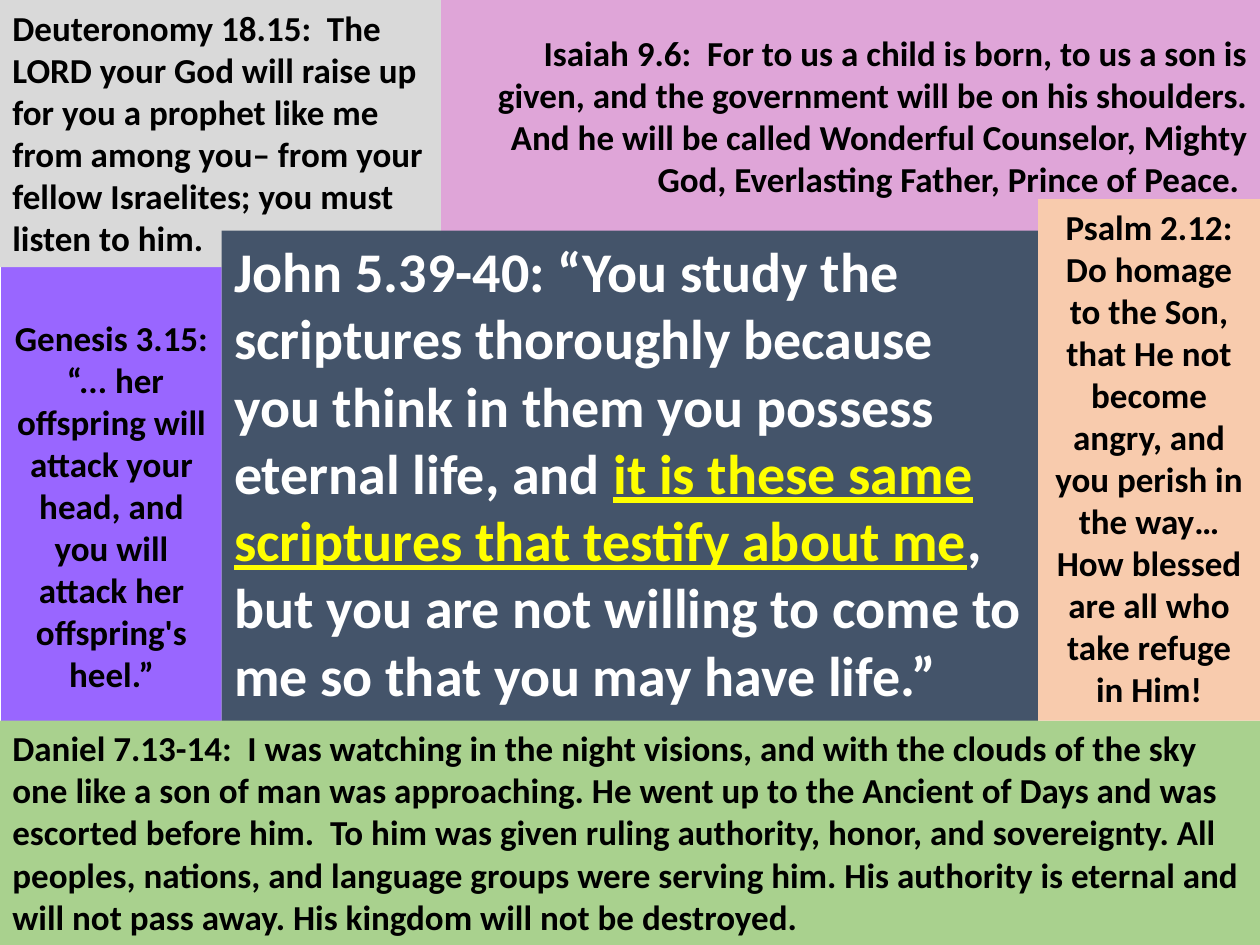
from pptx import Presentation
from pptx.dml.color import RGBColor
from pptx.enum.text import MSO_ANCHOR, MSO_AUTO_SIZE, PP_ALIGN
from pptx.util import Pt

LEFT, CENTER, RIGHT = PP_ALIGN.LEFT, PP_ALIGN.CENTER, PP_ALIGN.RIGHT
TOP = MSO_ANCHOR.TOP
NO_AUTOFIT = MSO_AUTO_SIZE.NONE

FONT = "Calibri"
BLANK_LAYOUT = 6
SLIDE_W, SLIDE_H = 720, 540
VERSE_SIZE, CENTRAL_SIZE = 20, 32
INSET_TOP = 3.6

COLORS = {
    "isaiah": "DFA5D8",
    "genesis": "9966FF",
    "deuteronomy": "D9D9D9",
    "john": "44546A",
    "daniel": "A9D18E",
    "psalm": "F8CBAD",
    "dark": "000000",
    "light": "FFFFFF",
    "highlight": "FFFF00",
}

# Panel edges shared by neighbouring verses
LEFT_COLUMN = 126.72
RIGHT_COLUMN = 593.28
DEUTERONOMY_W, DEUTERONOMY_H = 252, 152.64
PSALM_TOP = 113.76
JOHN_TOP, JOHN_H = 131.76, 317.52
DANIEL_TOP = 411.84

ISAIAH = (
    "Isaiah 9.6:  For to us a child is born, to us a son is given, and the "
    "government will be on his shoulders. And he will be called Wonderful "
    "Counselor, Mighty God, Everlasting Father, Prince of Peace. "
)
GENESIS = (
    "Genesis 3.15:  “... her offspring will attack your head, and you will "
    "attack her offspring's heel.”"
)
DEUTERONOMY = (
    "Deuteronomy 18.15:  The LORD your God will raise up for you a prophet "
    "like me from among you– from your fellow Israelites; you must listen "
    "to him."
)
JOHN_OPENING = (
    "John 5.39-40: “You study the scriptures thoroughly because you think "
    "in them you possess eternal life, and "
)
JOHN_KEY_PHRASE = "it is these same scriptures that testify about me"
JOHN_CLOSING = (
    ", but you are not willing to come to me so that you may have life.”"
)
DANIEL = (
    "Daniel 7.13-14:  I was watching in the night visions, and with the "
    "clouds of the sky one like a son of man was approaching. He went up to "
    "the Ancient of Days and was escorted before him.  To him was given "
    "ruling authority, honor, and sovereignty. All peoples, nations, and "
    "language groups were serving him. His authority is eternal and will "
    "not pass away. His kingdom will not be destroyed."
)
PSALM = (
    "Psalm 2.12: Do homage to the Son, that He not become angry, and you "
    "perish in the way… How blessed are all who take refuge in Him!"
)


def add_panel(slide, bounds, fill, align=LEFT, inset_top=INSET_TOP):
    """Add a filled text panel and return its first paragraph."""
    panel = slide.shapes.add_textbox(*(Pt(length) for length in bounds))
    panel.fill.solid()
    panel.fill.fore_color.rgb = RGBColor.from_string(COLORS[fill])
    frame = panel.text_frame
    frame.word_wrap = True
    frame.auto_size = NO_AUTOFIT
    frame.vertical_anchor = TOP
    frame.margin_top = Pt(inset_top)
    verse = frame.paragraphs[0]
    verse.alignment = align
    return verse


def format_run(run, size, color, underline=False):
    font = run.font
    font.name = FONT
    font.size = Pt(size)
    font.bold = True
    font.underline = underline
    font.color.rgb = RGBColor.from_string(COLORS[color])


def add_verse(slide, text, bounds, fill, align=LEFT, inset_top=INSET_TOP):
    verse = add_panel(slide, bounds, fill, align, inset_top)
    verse.text = text
    format_run(verse.runs[0], VERSE_SIZE, "dark")


def add_central_verse(slide, bounds):
    verse = add_panel(slide, bounds, "john")
    for text, color, underline in (
        (JOHN_OPENING, "light", False),
        (JOHN_KEY_PHRASE, "highlight", True),
        (JOHN_CLOSING, "light", False),
    ):
        run = verse.add_run()
        run.text = text
        format_run(run, CENTRAL_SIZE, color, underline)


def main():
    deck = Presentation()
    deck.slide_width, deck.slide_height = Pt(SLIDE_W), Pt(SLIDE_H)
    slide = deck.slides.add_slide(deck.slide_layouts[BLANK_LAYOUT])

    # Prophecies behind the central verse
    add_verse(slide, ISAIAH,
              (DEUTERONOMY_W, 0, SLIDE_W - DEUTERONOMY_W, 143.28),
              "isaiah", RIGHT, inset_top=18.2)
    add_verse(slide, GENESIS,
              (0.72, DEUTERONOMY_H, LEFT_COLUMN - 0.72, 273.6),
              "genesis", CENTER, inset_top=28)
    add_verse(slide, DEUTERONOMY, (0, 0, DEUTERONOMY_W, DEUTERONOMY_H),
              "deuteronomy")

    # Central verse
    add_central_verse(slide, (LEFT_COLUMN, JOHN_TOP,
                              RIGHT_COLUMN - LEFT_COLUMN, JOHN_H))

    # Prophecies in front, along the bottom and right edges
    add_verse(slide, DANIEL, (0, DANIEL_TOP, SLIDE_W, SLIDE_H - DANIEL_TOP),
              "daniel")
    add_verse(slide, PSALM,
              (RIGHT_COLUMN, PSALM_TOP,
               SLIDE_W - RIGHT_COLUMN, DANIEL_TOP - PSALM_TOP),
              "psalm", CENTER)

    deck.save("out.pptx")


if __name__ == "__main__":
    main()
